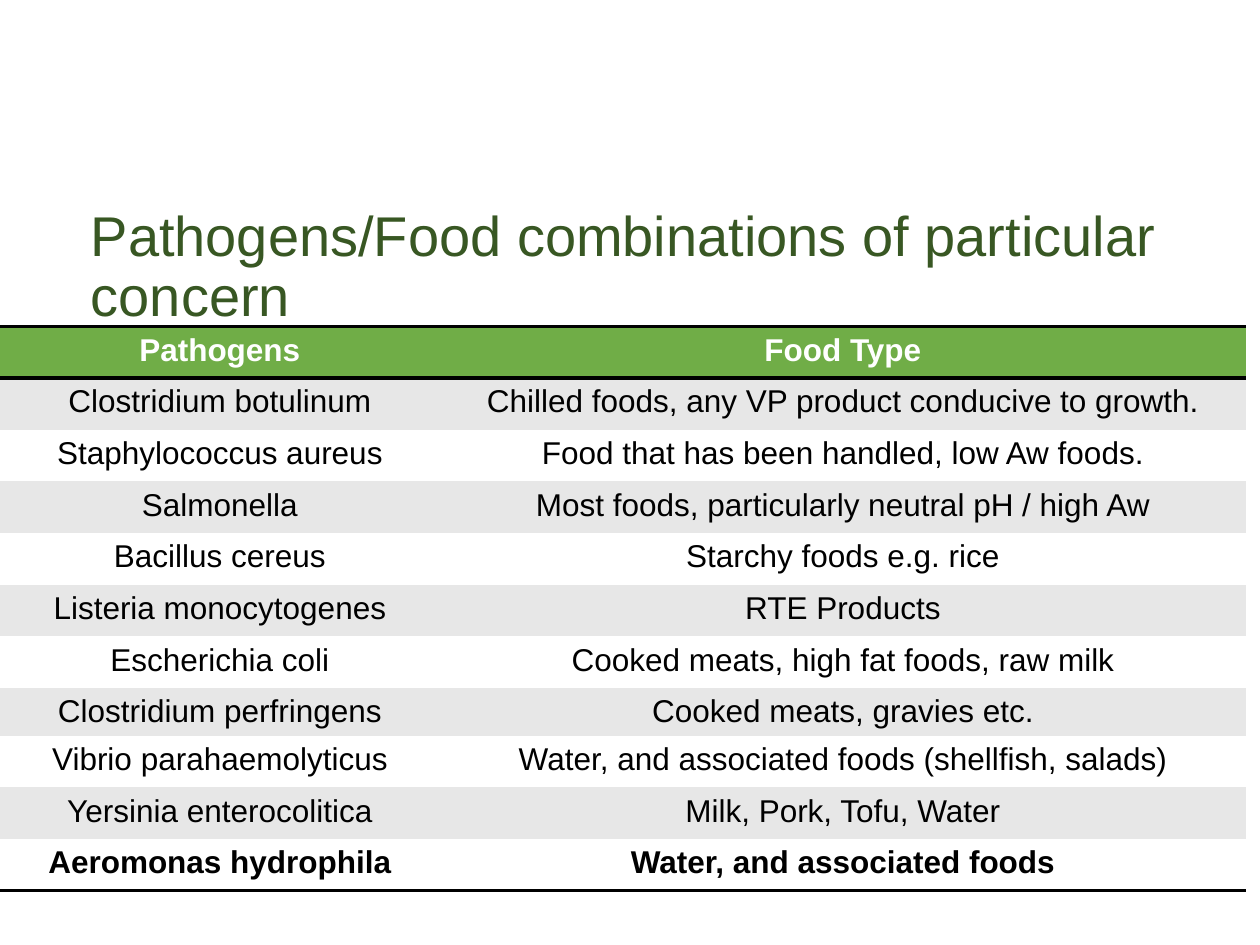
from lxml.etree import SubElement
from pptx import Presentation
from pptx.dml.color import RGBColor
from pptx.enum.text import MSO_ANCHOR, MSO_AUTO_SIZE, PP_ALIGN
from pptx.oxml.ns import qn
from pptx.util import Inches, Pt

DARK_GREEN = RGBColor(0x38, 0x57, 0x23)
GREEN = RGBColor(0x70, 0xAD, 0x47)
GREY = RGBColor(0xE7, 0xE7, 0xE7)
WHITE = RGBColor(0xFF, 0xFF, 0xFF)
BLACK = RGBColor(0x00, 0x00, 0x00)
PLAIN_TABLE_STYLE = "{2D5ABB26-0587-4C30-8999-92F81FD0307C}"

TITLE = "Pathogens/Food combinations of particular concern"
ROWS = [
    ("Pathogens", "Food Type"),
    ("Clostridium botulinum", "Chilled foods, any VP product conducive to growth."),
    ("Staphylococcus aureus", "Food that has been handled, low Aw foods."),
    ("Salmonella", "Most foods, particularly neutral pH / high Aw"),
    ("Bacillus cereus", "Starchy foods e.g. rice"),
    ("Listeria monocytogenes", "RTE Products"),
    ("Escherichia coli", "Cooked meats, high fat foods, raw milk"),
    ("Clostridium perfringens", "Cooked meats, gravies etc."),
    ("Vibrio parahaemolyticus", "Water, and associated foods (shellfish, salads)"),
    ("Yersinia enterocolitica", "Milk, Pork, Tofu, Water"),
    ("Aeromonas hydrophila", "Water, and associated foods"),
]
COLUMN_WIDTHS = [3.49, 6.4]
ROW_HEIGHTS = [0.31 if row[0].startswith("Clostridium perf") else 0.41 for row in ROWS]
ROW_HEIGHTS = [0.41] * 7 + [0.31] + [0.41] * 3


class SlideBuilder:
    font = "Arial"
    title_size = Pt(32)
    table_size = Pt(18)
    rule_width = Pt(2)

    def __init__(self, page):
        self.page = page

    def style(self, paragraph, size, color, bold=False):
        paragraph.font.name = self.font
        paragraph.font.size = size
        paragraph.font.bold = bold
        paragraph.font.color.rgb = color

    def title(self, text, left, top, width, height):
        box = self.page.shapes.title
        box.left, box.top = Inches(left), Inches(top)
        box.width, box.height = Inches(width), Inches(height)
        frame = box.text_frame
        frame.text = text
        frame.word_wrap = True
        frame.auto_size = MSO_AUTO_SIZE.NONE
        frame.vertical_anchor = MSO_ANCHOR.MIDDLE
        para = frame.paragraphs[0]
        para.alignment = PP_ALIGN.LEFT
        para.line_spacing = 0.9
        self.style(para, self.title_size, DARK_GREEN)

    def rule(self, cell, side):
        line = SubElement(cell._tc.get_or_add_tcPr(), qn(f"a:{side}"), w=str(self.rule_width))
        fill = SubElement(line, qn("a:solidFill"))
        SubElement(fill, qn("a:srgbClr"), val=str(BLACK))

    def cell(self, cell, text, row, last):
        header = row == 0
        if header:
            self.rule(cell, "lnT")
        if row in (0, last):
            self.rule(cell, "lnB")
        cell.fill.solid()
        cell.fill.fore_color.rgb = GREEN if header else GREY if row % 2 else WHITE
        cell.text = text
        para = cell.text_frame.paragraphs[0]
        para.alignment = PP_ALIGN.CENTER
        self.style(para, self.table_size, WHITE if header else BLACK, row in (0, last))

    def table(self, rows, left, top, widths, heights):
        frame = self.page.shapes.add_table(
            len(rows), len(widths), Inches(left), Inches(top),
            Inches(sum(widths)), Inches(sum(heights)),
        )
        table = frame.table
        table._tbl.tblPr.find(qn("a:tableStyleId")).text = PLAIN_TABLE_STYLE
        table.last_row = True
        for column, width in zip(table.columns, widths):
            column.width = Inches(width)
        for row, height in zip(table.rows, heights):
            row.height = Inches(height)
        for index, texts in enumerate(rows):
            for column, text in enumerate(texts):
                self.cell(table.cell(index, column), text, index, len(rows) - 1)


def main():
    deck = Presentation()
    deck.slide_width, deck.slide_height = Inches(10), Inches(7.5)
    builder = SlideBuilder(deck.slides.add_slide(deck.slide_layouts[5]))
    builder.title(TITLE, 0.62, 1.62, 9.09, 1.02)
    builder.table(ROWS, 0, 2.59, COLUMN_WIDTHS, ROW_HEIGHTS)
    deck.save("out.pptx")


if __name__ == "__main__":
    main()
